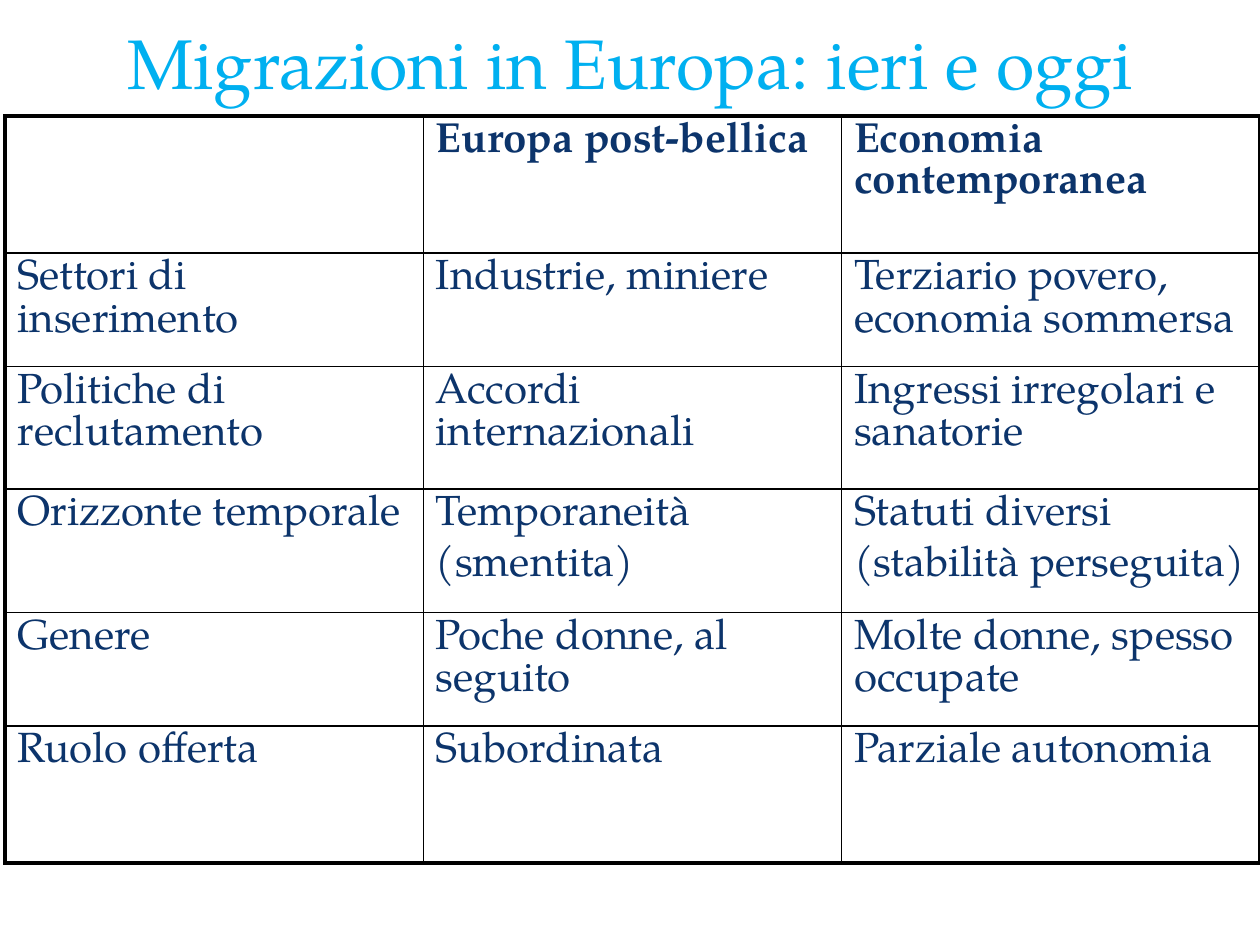
from typing import NamedTuple

from lxml import etree
from pptx import Presentation
from pptx.dml.color import RGBColor
from pptx.enum.text import MSO_ANCHOR, PP_ALIGN
from pptx.oxml.ns import qn
from pptx.util import Inches, Pt

MIDDLE, CENTER = MSO_ANCHOR.MIDDLE, PP_ALIGN.CENTER
SKY = RGBColor(0x00, 0xB0, 0xF0)
NAVY = RGBColor(0x0C, 0x34, 0x6B)
BLACK = RGBColor(0, 0, 0)
FACE = "TeX Gyre Pagella"
WIDE, HIGH = Inches(10), Inches(7.5)
THIN, THICK = Pt(1), Pt(2.25)
LEFT, TOP = Inches(0.04), Inches(0.92)


class Row(NamedTuple):
    high: float
    topic: str
    past: str
    now: str


ROWS = [
    Row(1.09, "", "Europa post-bellica", "Economia contemporanea"),
    Row(0.88, "Settori di inserimento", "Industrie, miniere",
        "Terziario povero, economia sommersa"),
    Row(0.97, "Politiche di reclutamento", "Accordi internazionali",
        "Ingressi irregolari e sanatorie"),
    Row(0.98, "Orizzonte temporale", "Temporaneità\n(smentita)",
        "Statuti diversi\n(stabilità perseguita)"),
    Row(0.9, "Genere", "Poche donne, al seguito",
        "Molte donne, spesso occupate"),
    Row(1.09, "Ruolo offerta", "Subordinata", "Parziale autonomia"),
]


def style(font, size: int, color: RGBColor, bold: bool = False) -> None:
    font.name, font.size, font.bold = FACE, Pt(size), bold
    font.color.rgb = color


def add_title(slide, text: str) -> None:
    edge = int(WIDE * 0.012)
    box = slide.shapes.add_textbox(edge, Inches(0.05), WIDE - 2 * edge, Inches(0.87))
    frame = box.text_frame
    frame.word_wrap = True
    frame.vertical_anchor = MIDDLE
    frame.text = text
    line = frame.paragraphs[0]
    line.alignment = CENTER
    style(line.runs[0].font, 40, SKY)


def add_edge(cell, side: str, width: int) -> None:
    props = cell._tc.get_or_add_tcPr()
    edge = etree.SubElement(props, qn(f"a:ln{side}"), w=str(width))
    fill = etree.SubElement(edge, qn("a:solidFill"))
    etree.SubElement(fill, qn("a:srgbClr"), val=str(BLACK))


def fill_cell(cell, text: str, bold: bool) -> None:
    cell.margin_left = cell.margin_right = Inches(0.1)
    cell.margin_top = cell.margin_bottom = Inches(0.05)
    cell.fill.background()
    cell.text_frame.text = text
    for i, line in enumerate(cell.text_frame.paragraphs):
        if i:
            line.space_before = Pt(4.8)
        for run in line.runs:
            style(run.font, 24, NAVY, bold)


def add_grid(slide, rows: list[Row]) -> None:
    """Draw the table with a thick frame and thin inner lines."""
    count = len(Row._fields) - 1
    high = Inches(sum(row.high for row in rows))
    table = slide.shapes.add_table(
        len(rows), count, LEFT, TOP, WIDE - LEFT, high).table
    table.first_row = table.horz_banding = False
    for r, row in enumerate(rows):
        table.rows[r].height = Inches(row.high)
        for c, text in enumerate(row[1:]):
            cell = table.cell(r, c)
            outer = {"L": c == 0, "R": c == count - 1,
                     "T": r == 0, "B": r == len(rows) - 1}
            for side, thick in outer.items():
                add_edge(cell, side, THICK if thick else THIN)
            fill_cell(cell, text, bold=r == 0)


def main() -> None:
    deck = Presentation()
    deck.slide_width, deck.slide_height = WIDE, HIGH
    slide = deck.slides.add_slide(deck.slide_layouts[6])
    add_title(slide, "Migrazioni in Europa: ieri e oggi")
    add_grid(slide, ROWS)
    deck.save("out.pptx")


if __name__ == "__main__":
    main()
